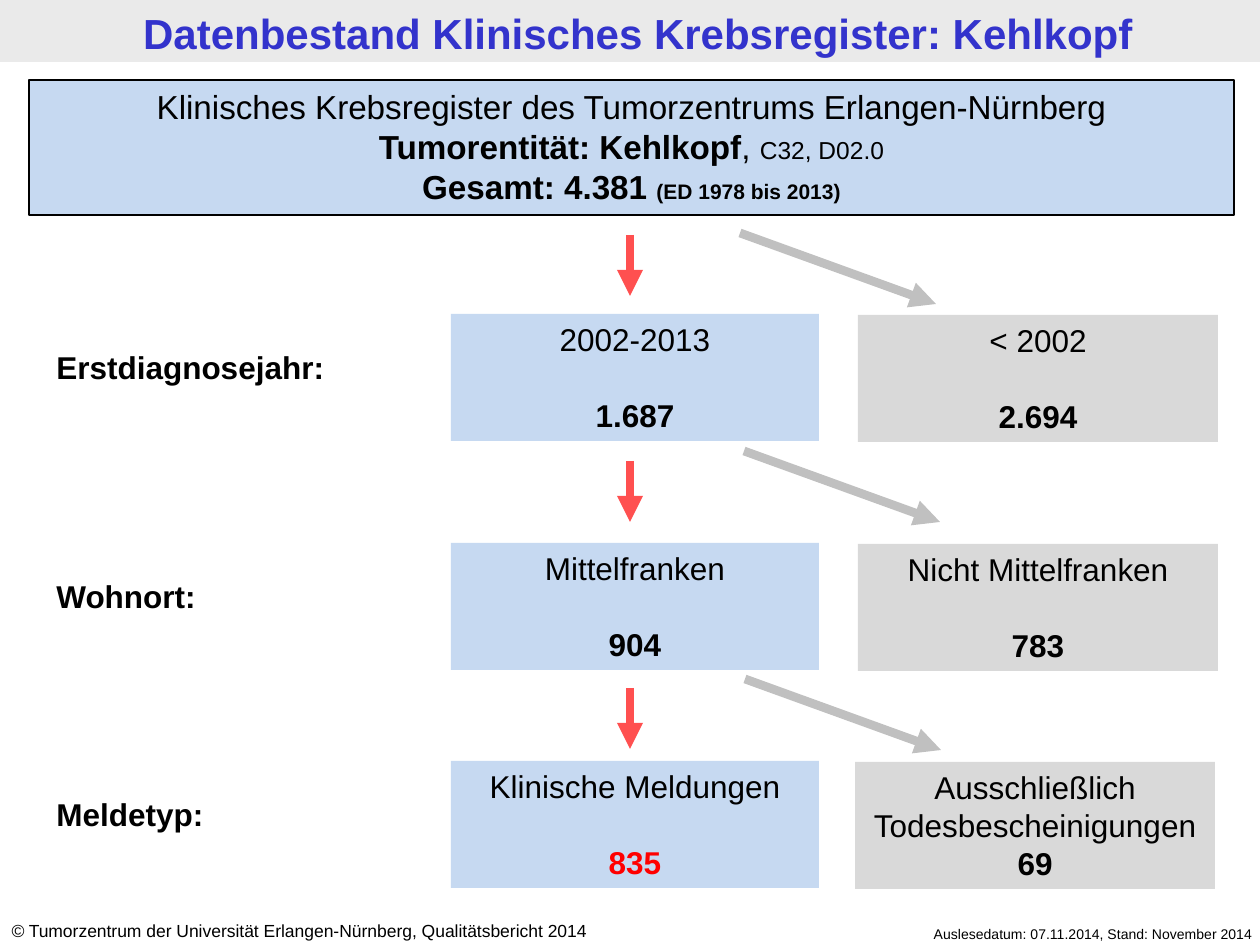
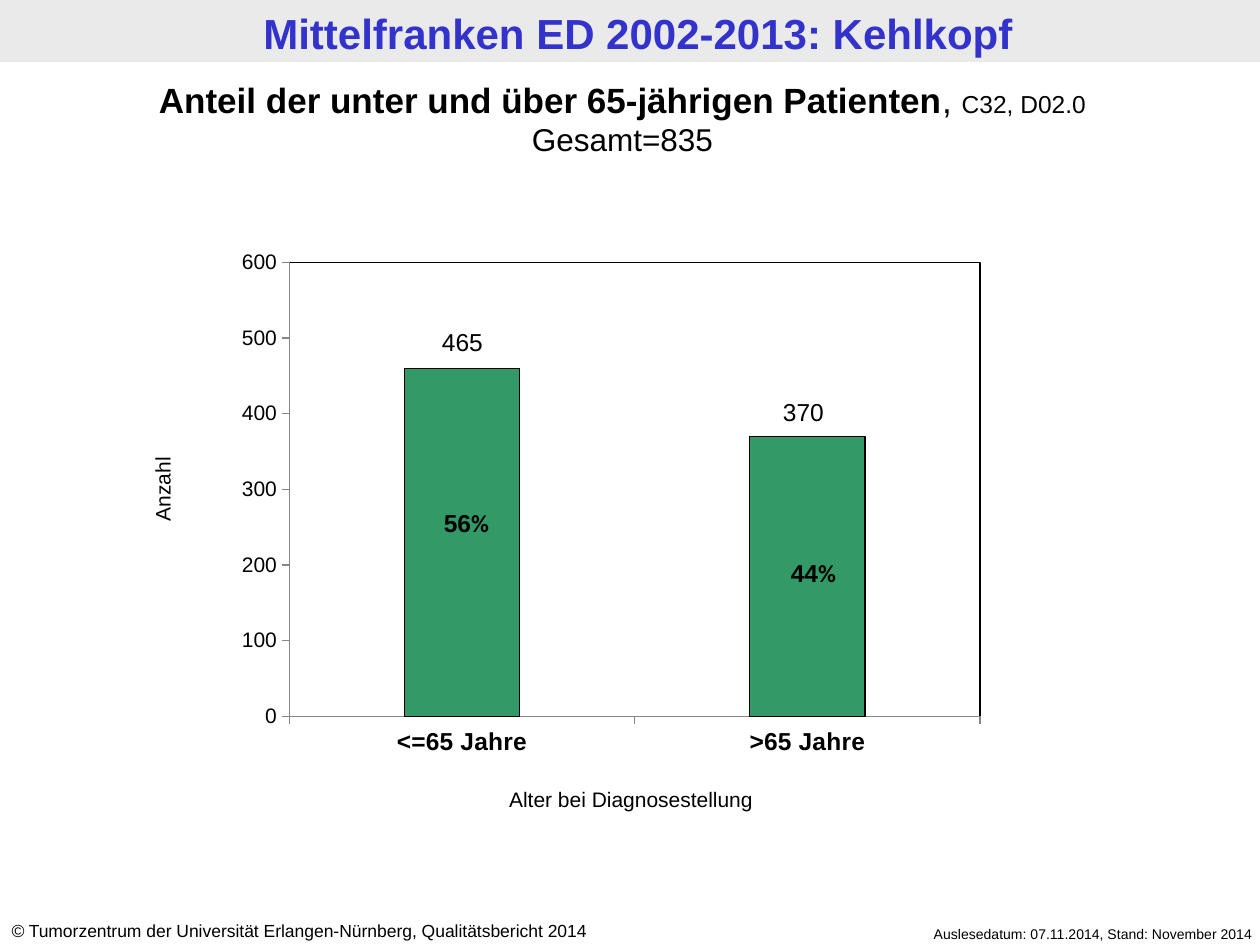
import pptx
import pptx.chart.data
import pptx.dml.color
import pptx.enum.chart
import pptx.enum.shapes
import pptx.enum.text
import pptx.oxml
import pptx.oxml.ns
import pptx.util

# ---- Content ----
HEADS = ["Datenbestand Klinisches Krebsregister: Kehlkopf",
         "Mittelfranken ED 2002-2013: Kehlkopf"]
OWNER = " Tumorzentrum der Universität Erlangen-Nürnberg, Qualitätsbericht 2014"
DATES = "Auslesedatum: 07.11.2014, Stand: November 2014"
CODES = "C32, D02.0"

# A run is (text, size, bold); a paragraph is a list of runs
TOTAL = [
    [("Klinisches Krebsregister des Tumorzentrums Erlangen-Nürnberg", 19, False)],
    [("Tumorentität: Kehlkopf", 19, True), (", ", 19, False), (CODES, 14, False)],
    [("Gesamt: 4.381 ", 19, True), ("(ED 1978 bis 2013)", 12, True)],
]
SHARE = [
    [("Anteil der unter und über 65-jährigen Patienten", 20, True),
     (", ", 20, False), (CODES, 14, False)],
    [("Gesamt=835", 18, False)],
]

# Each step: label, its top, kept box, dropped box, box top, arrow starts
STEPS = [
    {"label": "Erstdiagnosejahr:", "kept": ("2002-2013", "1.687"),
     "out": ("< 2002", "2.694"), "top": 314, "left": 858,
     "red": 235, "grey": (740, 233)},
    {"label": "Wohnort:", "kept": ("Mittelfranken", "904"),
     "out": ("Nicht Mittelfranken", "783"), "top": 543, "left": 858,
     "red": 461, "grey": (744, 451)},
    {"label": "Meldetyp:", "kept": ("Klinische Meldungen", "835"),
     "out": ("Ausschließlich Todesbescheinigungen", "69"), "top": 761, "left": 855,
     "red": 688, "grey": (745, 679)},
]

AGES = {"<=65 Jahre": 460, ">65 Jahre": 370}
# Text, size, bold, box, turn
NOTES = [
    ("465", 14, False, (398, 321, 129, 43), 0),
    ("370", 14, False, (739, 391, 129, 43), 0),
    ("56%", 14, True, (402, 502, 129, 43), 0),
    ("44%", 14, True, (749, 552, 129, 43), 0),
    ("Alter bei Diagnosestellung", 12, False, (421, 780, 420, 38), 0),
    ("Anzahl", 12, False, (-2, 470, 329, 38), 270),
]

# ---- Shared style ----
HUES = {"ink": "000000", "head": "3333CC", "band": "EAEAEA", "blue": "C6D9F1",
        "grey": "D9D9D9", "red": "FF5050", "arrow": "C0C0C0", "mark": "FF0000",
        "bar": "339966", "axis": "868686"}
FONT = "Arial"
LEAD = 1.2
ALIGN = pptx.enum.text.PP_ALIGN


def px(num):
    return round(num * 914400 / 126)


def hue(name):
    return pptx.dml.color.RGBColor.from_string(HUES[name])


def write(shape, paras, align=ALIGN.CENTER, color="ink", gap=0):
    """Fill a shape with paragraphs; gap is the space before the last one."""
    frame = shape.text_frame
    frame.word_wrap = True
    frame.vertical_anchor = pptx.enum.text.MSO_ANCHOR.TOP
    for num, runs in enumerate(paras):
        para = frame.add_paragraph() if num else frame.paragraphs[0]
        para.alignment = align
        para.line_spacing = pptx.util.Pt(LEAD * max(size for _, size, _ in runs))
        para.font.name = FONT
        para.font.color.rgb = hue(color)
        sizes = {size for _, size, _ in runs}
        bolds = {bold for _, _, bold in runs}
        if len(sizes) == 1:
            para.font.size = pptx.util.Pt(runs[0][1])
        if len(bolds) == 1:
            para.font.bold = runs[0][2]
        for text, size, bold in runs:
            run = para.add_run()
            run.text = text
            if len(sizes) > 1:
                run.font.size = pptx.util.Pt(size)
            if len(bolds) > 1:
                run.font.bold = bold
    if gap:
        para.space_before = pptx.util.Pt(gap)
    return para


def label(slide, box, paras, **style):
    shape = slide.shapes.add_textbox(*map(px, box))
    write(shape, paras, **style)
    return shape


def block(slide, box, fill, edge=None):
    kind = pptx.enum.shapes.MSO_SHAPE.RECTANGLE
    shape = slide.shapes.add_shape(kind, *map(px, box))
    shape.shadow.inherit = False
    shape.fill.solid()
    shape.fill.fore_color.rgb = hue(fill)
    if edge:
        shape.line.color.rgb = hue(edge)
        shape.line.width = pptx.util.Pt(0.75)
    else:
        shape.line.fill.background()
    return shape


def arrow(slide, start, move, color):
    ends = (*start, start[0] + move[0], start[1] + move[1])
    kind = pptx.enum.shapes.MSO_CONNECTOR.STRAIGHT
    line = slide.shapes.add_connector(kind, *map(px, ends))
    line.line.color.rgb = hue(color)
    line.line.width = pptx.util.Pt(5)
    space = pptx.oxml.ns.nsdecls("a")
    line.line._get_or_add_ln().append(
        pptx.oxml.parse_xml(f'<a:tailEnd {space} type="triangle"/>'))
    line._element.spPr.append(pptx.oxml.parse_xml(f"<a:effectLst {space}/>"))


def page(deck, head):
    """Add a slide with title band and footers."""
    slide = deck.slides.add_slide(deck.slide_layouts[6])
    block(slide, (0, 0, 1260, 62), "band")
    label(slide, (8, 1, 1260, 62), [[(head, 24, True)]], color="head")
    label(slide, (838, 919, 427, 30), [[(DATES, 8, False)]], align=ALIGN.RIGHT)
    foot = label(slide, (-1, 914, 660, 34),
                 [[("©", 10, False), (OWNER, 10, False)]], align=ALIGN.LEFT)
    foot.text_frame.paragraphs[0].runs[0].font.italic = True
    return slide


# ---- Slide 1: selection steps ----
def flow(deck):
    slide = page(deck, HEADS[0])
    write(block(slide, (29, 80, 1205, 135), "blue", "ink"), TOTAL)
    for step in STEPS:
        top = step["top"]
        label(slide, (44, top + 28, 348, 50), [[(step["label"], 18, True)]],
              align=ALIGN.LEFT)
        boxes = [(step["kept"], (451, top, 368, 127), "blue"),
                 (step["out"], (step["left"], top + 1, 360, 127), "grey")]
        for (name, count), box, fill in boxes:
            wraps = len(name) > 24
            last = write(block(slide, box, fill),
                         [[(name, 18, False)], [(count, 18, True)]],
                         gap=0 if wraps else 18 * LEAD)
            if step is STEPS[-1] and fill == "blue":
                last.font.color.rgb = hue("mark")
        arrow(slide, (630, step["red"]), (0, 61), "red")
        arrow(slide, step["grey"], (196, 71), "arrow")


# ---- Slide 2: age chart ----
def frame_plot(chart):
    """Place the inner plot area and give it a thin black frame."""
    area = chart._chartSpace.chart.plotArea
    space = pptx.oxml.ns.nsdecls("c", "a")
    for old in area.findall(pptx.oxml.ns.qn("c:layout")):
        area.remove(old)
    parts = '<c:layoutTarget val="inner"/>'
    parts += "".join(f'<c:{side}Mode val="edge"/>' for side in "xy")
    sizes = {"x": 0.113, "y": 0.142, "w": 0.786, "h": 0.772}
    parts += "".join(f'<c:{key} val="{val}"/>' for key, val in sizes.items())
    area.insert(0, pptx.oxml.parse_xml(
        f"<c:layout {space}><c:manualLayout>{parts}</c:manualLayout></c:layout>"))
    area.append(pptx.oxml.parse_xml(
        f'<c:spPr {space}><a:noFill/><a:ln w="9525"><a:solidFill>'
        f'<a:srgbClr val="{HUES["ink"]}"/></a:solidFill></a:ln></c:spPr>'))


def ages(deck):
    slide = page(deck, HEADS[1])
    label(slide, (0, 72, 1245, 93), SHARE)
    data = pptx.chart.data.CategoryChartData()
    data.categories = list(AGES)
    data.add_series("Anzahl", list(AGES.values()))
    kinds = pptx.enum.chart
    chart = slide.shapes.add_chart(kinds.XL_CHART_TYPE.COLUMN_STACKED,
                                   *map(px, (190, 179, 879, 588)), data).chart
    chart.has_legend = chart.has_title = False
    chart.font.name = FONT
    chart.font.size = pptx.util.Pt(12)
    chart.font.color.rgb = hue("ink")

    plot = chart.plots[0]
    plot.gap_width, plot.overlap = 200, 100
    plot.vary_by_categories = False
    bars = plot.series[0].format
    bars.fill.solid()
    bars.fill.fore_color.rgb = hue("bar")
    bars.line.color.rgb = hue("ink")
    bars.line.width = pptx.util.Pt(0.75)

    for axis, size, bold in [(chart.category_axis, 14, True),
                             (chart.value_axis, 12, False)]:
        axis.has_major_gridlines = False
        axis.major_tick_mark = kinds.XL_TICK_MARK.OUTSIDE
        axis.minor_tick_mark = kinds.XL_TICK_MARK.NONE
        axis.format.line.color.rgb = hue("axis")
        axis.tick_labels.font.name = FONT
        axis.tick_labels.font.size = pptx.util.Pt(size)
        axis.tick_labels.font.bold = bold
    value = chart.value_axis
    value.minimum_scale, value.maximum_scale, value.major_unit = 0, 600, 100
    frame_plot(chart)

    for text, size, bold, box, turn in NOTES:
        runs = [(text, size, bold)]
        if text.endswith("%"):
            runs = [(text[:-1], size, bold), ("%", size, bold)]
        note = label(slide, box, [runs])
        note.rotation = turn
        if len(runs) > 1:
            note.text_frame.paragraphs[0].runs[1].font.name = "Calibri"


def main():
    deck = pptx.Presentation()
    deck.slide_width, deck.slide_height = px(1260), px(945)
    flow(deck)
    ages(deck)
    deck.save("out.pptx")


if __name__ == "__main__":
    main()
